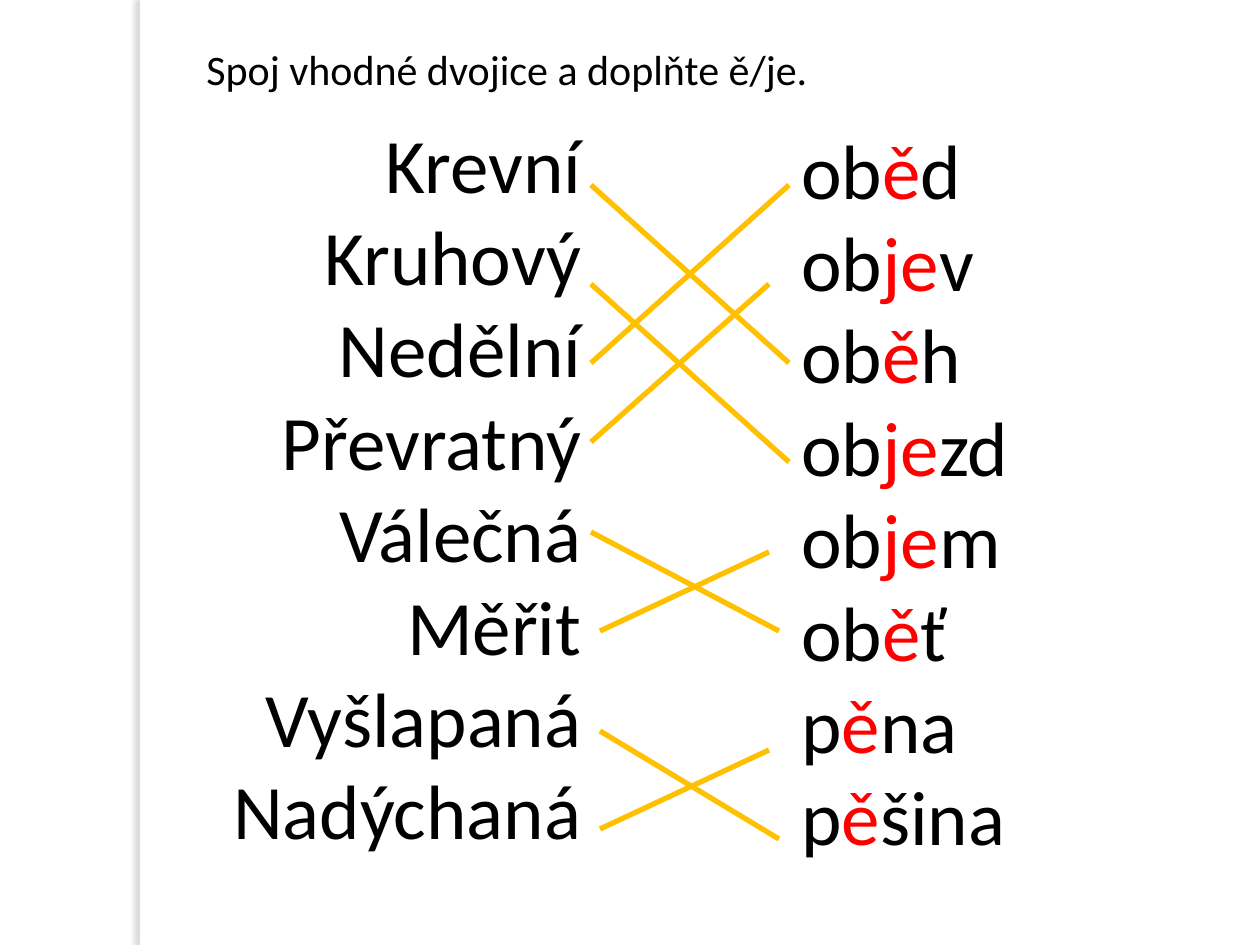
from lxml import etree
from pptx import Presentation
from pptx.dml.color import RGBColor
from pptx.enum.shapes import MSO_CONNECTOR, MSO_SHAPE
from pptx.enum.text import MSO_AUTO_SIZE, PP_ALIGN
from pptx.oxml.ns import qn
from pptx.util import Emu, Pt

STRAIGHT = MSO_CONNECTOR.STRAIGHT
RECTANGLE = MSO_SHAPE.RECTANGLE
GROW = MSO_AUTO_SIZE.SHAPE_TO_FIT_TEXT
LEFT, RIGHT = PP_ALIGN.LEFT, PP_ALIGN.RIGHT

BLACK = RGBColor(0x00, 0x00, 0x00)
WHITE = RGBColor(0xFF, 0xFF, 0xFF)
RED = RGBColor(0xFF, 0x00, 0x00)
GOLD = RGBColor(0xFF, 0xC0, 0x00)
SHADOW = RGBColor(0x73, 0x6F, 0x63)

FONT = "Calibri"
PX_PER_INCH = 126

ADJECTIVES = ["Krevní", "Kruhový", "Nedělní", "Převratný",
              "Válečná", "Měřit", "Vyšlapaná", "Nadýchaná"]
NOUNS = ["ob|ě|d", "ob|je|v", "ob|ě|h", "ob|je|zd",
         "ob|je|m", "ob|ě|ť", "p|ě|na", "p|ě|šina"]
MATCHES = [
    (789, 363, 591, 185), (789, 462, 591, 284),
    (789, 185, 591, 363), (769, 284, 591, 442),
    (779, 631, 591, 532), (769, 552, 600, 631),
    (779, 839, 600, 731), (769, 750, 600, 829),
]


def px(*lengths):
    return [Emu(round(length * 914400 / PX_PER_INCH)) for length in lengths]


class Worksheet:
    def __init__(self, slide):
        self.slide = slide

    def margin_strip(self, *box):
        strip = self.slide.shapes.add_shape(RECTANGLE, *px(*box))
        strip.shadow.inherit = False
        strip.fill.solid()
        strip.fill.fore_color.rgb = WHITE
        strip.line.fill.background()
        effects = strip._element.spPr.find(qn("a:effectLst"))
        shadow = etree.SubElement(
            effects, qn("a:outerShdw"), blurRad=str(Pt(3)), dist=str(Pt(3)),
            dir="10800000", algn="tl", rotWithShape="0")
        color = etree.SubElement(shadow, qn("a:srgbClr"), val=str(SHADOW))
        etree.SubElement(color, qn("a:alpha"), val="25000")

    def text(self, box, lines, size, align=LEFT, wrap=False):
        frame = self.slide.shapes.add_textbox(*px(*box)).text_frame
        frame.word_wrap = wrap
        frame.auto_size = GROW
        for index, line in enumerate(lines):
            paragraph = frame.paragraphs[0] if index == 0 else frame.add_paragraph()
            paragraph.alignment = align
            for position, part in enumerate(line.split("|")):
                run = paragraph.add_run()
                run.text = part
                run.font.name = FONT
                run.font.size = Pt(size)
                run.font.color.rgb = RED if position == 1 else BLACK

    def match_line(self, *ends):
        line = self.slide.shapes.add_connector(STRAIGHT, *px(*ends))
        line.line.color.rgb = GOLD
        line.line.width = Pt(3)
        etree.SubElement(line._element.spPr, qn("a:effectLst"))


def main():
    deck = Presentation()
    deck.slide_width, deck.slide_height = px(1260, 945)
    sheet = Worksheet(deck.slides.add_slide(deck.slide_layouts[6]))
    sheet.margin_strip(140, 0, 10, 945)
    sheet.text((174, 110, 420, 835), ADJECTIVES, 44, align=RIGHT)
    sheet.text((789, 116, 436, 912), NOUNS, 44, wrap=True)
    sheet.text((194, 37, 684, 63), ["Spoj vhodné dvojice a doplňte ě/je."], 24)
    for ends in MATCHES:
        sheet.match_line(*ends)
    deck.save("out.pptx")


if __name__ == "__main__":
    main()
